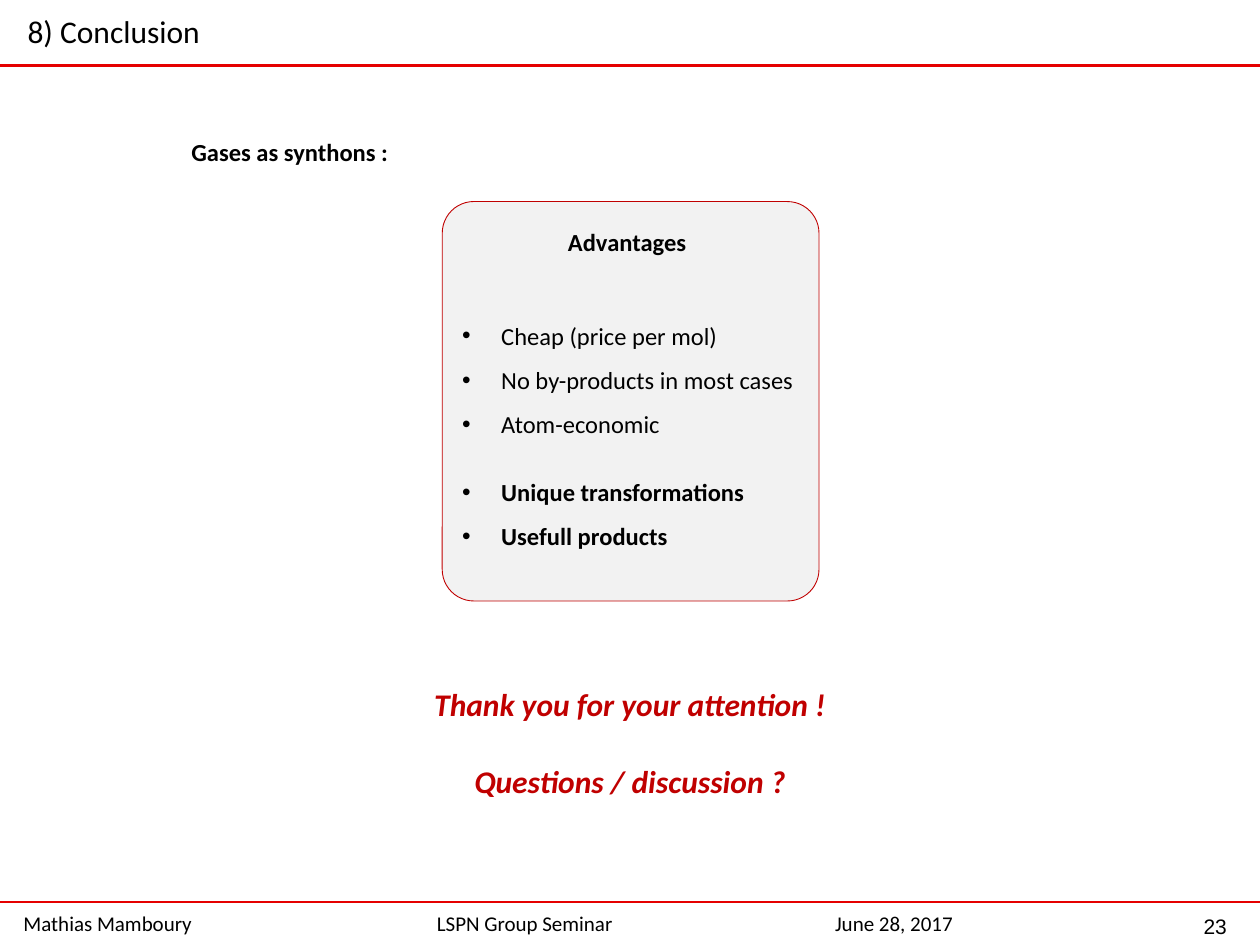
from lxml import etree
from pptx import Presentation
from pptx import util as u
from pptx.dml.color import RGBColor
from pptx.enum import shapes, text
from pptx.oxml.ns import qn

Inches, Pt = u.Inches, u.Pt
COLORS = {"rule": "E50000", "accent": "C00000", "panel": "F2F2F2", "ink": "000000"}
LEFT, CENTER = text.PP_ALIGN.LEFT, text.PP_ALIGN.CENTER

presentation = Presentation()
presentation.slide_width, presentation.slide_height = Inches(10), Inches(7.5)
slide = presentation.slides.add_slide(presentation.slide_layouts[6])


def color(name):
    return RGBColor.from_string(COLORS[name])


def add_text(box, lines, size, align=LEFT, ink="ink", bold=False, italic=False,
             font="Calibri", wrap=False, bullet=False, gap=0):
    """Add a text box with one paragraph per line; gap is the space between them in points."""
    frame = slide.shapes.add_textbox(*map(Inches, box)).text_frame
    frame.word_wrap = wrap
    for index, line in enumerate(lines):
        paragraph = frame.paragraphs[0] if index == 0 else frame.add_paragraph()
        paragraph.text = line
        paragraph.alignment = align
        if index and gap:
            paragraph.space_before = Pt(gap)
        if bullet:
            paragraph.line_spacing = 1.5
            properties = paragraph._p.get_or_add_pPr()
            properties.set("marL", str(Inches(0.31)))
            properties.set("indent", str(-Inches(0.31)))
            etree.SubElement(properties, qn("a:buFont")).set("typeface", "Arial")
            etree.SubElement(properties, qn("a:buChar")).set("char", "•")
        paragraph.font.name = font
        paragraph.font.size = Pt(size)
        paragraph.font.bold = bold
        paragraph.font.italic = italic
        paragraph.font.color.rgb = color(ink)
    return frame


# Header and footer
for y in (7.16, 0.52):
    rule = slide.shapes.add_connector(
        shapes.MSO_CONNECTOR.STRAIGHT, Inches(0), Inches(y), Inches(10), Inches(y))
    rule.line.color.rgb = color("rule")
    rule.line.width = Pt(1.5)
    etree.SubElement(rule._element.spPr, qn("a:effectLst"))

add_text((0.12, 0.05, 1.59, 0.4), ["8) Conclusion"], 18)
page_number = add_text((9.45, 7.15, 0.39, 0.4), ["23"], 12, CENTER, font="Arial", wrap=True)
page_number.vertical_anchor = text.MSO_ANCHOR.MIDDLE
for x, width, label in ((0.08, 1.55, "Mathias Mamboury"),
                        (6.52, 1.15, "June 28, 2017"),
                        (3.36, 1.61, "LSPN Group Seminar")):
    add_text((x, 7.18, width, 0.3), [label], 12, CENTER)

# Closing words
add_text((3.32, 5.39, 3.36, 1.01),
         ["Thank you for your attention !", "Questions / discussion ?"],
         18, CENTER, "accent", bold=True, italic=True, gap=22)

# Advantages panel
panel = slide.shapes.add_shape(
    shapes.MSO_SHAPE.ROUNDED_RECTANGLE, Inches(3.51), Inches(1.6), Inches(2.99), Inches(3.17))
panel.adjustments[0] = 0.084
panel.shadow.inherit = False
panel.fill.solid()
panel.fill.fore_color.rgb = color("panel")
panel.line.color.rgb = color("accent")
panel.line.width = Pt(0.5)

add_text((1.42, 1.04, 1.77, 0.34), ["Gases as synthons :"], 14, bold=True)
add_text((3.48, 1.75, 3.04, 0.34), ["Advantages "], 14, CENTER, bold=True, wrap=True)
add_text((3.57, 2.38, 2.86, 1.51),
         ["Cheap (price per mol)", "No by-products in most cases", "Atom-economic"],
         14, bullet=True)
add_text((3.57, 3.62, 2.46, 0.81), ["Unique transformations", "Usefull products"],
         14, bold=True, bullet=True)

presentation.save("out.pptx")
